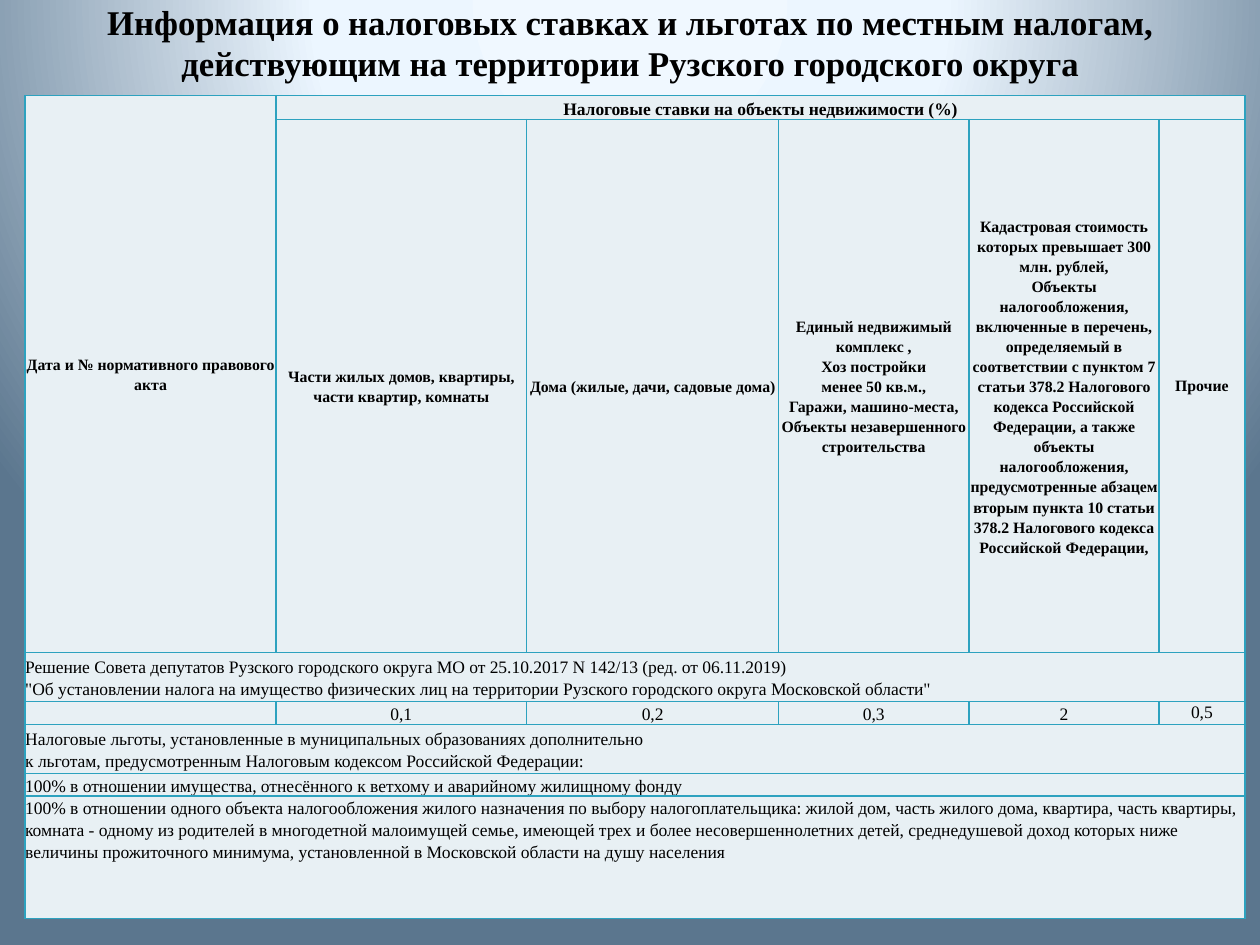
from copy import deepcopy
from pptx import Presentation
from pptx.dml.color import RGBColor
from pptx.enum.text import MSO_ANCHOR as ANCHOR, PP_ALIGN as ALIGN
from pptx.oxml import parse_xml
from pptx.util import Inches, Pt

NS = 'xmlns:a="http://schemas.openxmlformats.org/drawingml/2006/main"'
NS_P = 'xmlns:p="http://schemas.openxmlformats.org/presentationml/2006/main"'


def rgb(value):
    return RGBColor.from_string(value)


def write(p, text, size, bold, align, spacing=None):
    p.text = text
    p.alignment = align
    p.line_spacing = spacing
    for r in p.runs:
        for name, value in {"name": "Times New Roman", "size": Pt(size), "bold": bold}.items():
            setattr(r.font, name, value)
        r.font.color.rgb = rgb("000000")
    for br in p._p.xpath("a:br"):
        br.append(deepcopy(p.runs[0]._r.rPr))


prs = Presentation()
prs.slide_width, prs.slide_height = Inches(10), Inches(7.5)
s = prs.slides.add_slide(prs.slide_layouts[5])

stops = "".join(
    f'<a:gs pos="{pos * 1000}"><a:srgbClr val="{color}"/></a:gs>'
    for pos, color in [(0, "F0F8FF"), (40, "ECF6FF"), (100, "5B768E")]
)
s.element.cSld.insert(0, parse_xml(
    f'<p:bg {NS_P} {NS}><p:bgPr><a:gradFill rotWithShape="1"><a:gsLst>{stops}</a:gsLst>'
    '<a:path path="circle"><a:fillToRect l="50000" t="-80000" r="50000" b="180000"/></a:path>'
    '</a:gradFill><a:effectLst/></p:bgPr></p:bg>'
))

title = s.shapes.title
title.left, title.top, title.width, title.height = map(Inches, (0.5, 0, 9, 0.67))
tf = title.text_frame
tf.word_wrap = True
tf.vertical_anchor = ANCHOR.MIDDLE
tf.margin_top = tf.margin_bottom = 0
write(
    tf.paragraphs[0],
    "Информация о налоговых ставках и льготах по местным налогам, "
    "действующим на территории Рузского городского округа",
    19.8, True, ALIGN.CENTER,
)

cols = [1.99, 1.99, 2, 1.51, 1.51, 0.68]
rows = [0.19, 4.23, 0.39, 0.18, 0.39, 0.18, 0.97]
table = s.shapes.add_table(
    len(rows), len(cols), Inches(0.2), Inches(0.76), Inches(sum(cols)), Inches(sum(rows))
).table
for col, width in zip(table.columns, cols):
    col.width = Inches(width)
for row, height in zip(table.rows, rows):
    row.height = Inches(height)

for cell in table.iter_cells():
    cell.margin_left = cell.margin_right = cell.margin_top = cell.margin_bottom = 0
    cell.vertical_anchor = ANCHOR.MIDDLE
    tc_pr = cell._tc.get_or_add_tcPr()
    for side in ("lnL", "lnR", "lnT", "lnB"):
        tc_pr.append(parse_xml(
            f'<a:{side} {NS} w="12700"><a:solidFill><a:srgbClr val="2DA2BF"/></a:solidFill></a:{side}>'
        ))
    cell.fill.solid()
    cell.fill.fore_color.rgb = rgb("E8F0F4")
    cell.text_frame.paragraphs[0]._p.get_or_add_endParaRPr().set("sz", "1000")

table.cell(0, 0).merge(table.cell(1, 0))
table.cell(0, 1).merge(table.cell(0, 5))
for row in (2, 4, 5, 6):
    table.cell(row, 0).merge(table.cell(row, 5))

headers = [
    "Части жилых домов, квартиры, части квартир, комнаты",
    "Дома (жилые, дачи, садовые дома)",
    "Единый недвижимый комплекс ,\nХоз постройки\nменее 50 кв.м.,\nГаражи, машино-места,\n"
    "Объекты незавершенного строительства",
    "Кадастровая стоимость которых превышает 300 млн. рублей,\nОбъекты налогообложения, "
    "включенные в перечень, определяемый в соответствии с пунктом 7 статьи 378.2 Налогового "
    "кодекса Российской Федерации, а также объекты налогообложения, предусмотренные абзацем "
    "вторым пункта 10 статьи 378.2 Налогового кодекса Российской Федерации,",
    "Прочие",
]
rates = ["0,1", "0,2", "0,3", "2", "0,5"]
notes = {
    2: "Решение Совета депутатов Рузского городского округа МО от 25.10.2017 N 142/13 "
       "(ред. от 06.11.2019)\n\"Об установлении налога на имущество физических лиц на "
       "территории Рузского городского округа Московской области\"",
    4: "Налоговые льготы, установленные в муниципальных образованиях дополнительно\n"
       "к льготам, предусмотренным Налоговым кодексом Российской Федерации:",
    5: "100% в отношении имущества, отнесённого к ветхому и аварийному жилищному фонду",
    6: "100% в отношении одного объекта налогообложения жилого назначения по выбору "
       "налогоплательщика: жилой дом, часть жилого дома, квартира, часть квартиры, комната - "
       "одному из родителей в многодетной малоимущей семье, имеющей трех и более "
       "несовершеннолетних детей, среднедушевой доход которых ниже величины прожиточного "
       "минимума, установленной в Московской области на душу населения",
}

entries = [
    (0, 0, "Дата и № нормативного правового акта", 9, True, ALIGN.CENTER, 1.15),
    (0, 1, "Налоговые ставки на объекты недвижимости (%)", 10, True, ALIGN.CENTER, 1.15),
]
for col, (header, rate) in enumerate(zip(headers, rates), 1):
    last = col == len(headers)
    entries.append((1, col, header, 9, True, ALIGN.CENTER, None if last else 1.15))
    entries.append((3, col, rate, 10, False, ALIGN.CENTER, None if last else Pt(12.8)))
for row, note in notes.items():
    entries.append((row, 0, note, 10, False, ALIGN.LEFT, Pt(12.8) if row == 5 else 1.15))
for row, col, *text_format in entries:
    write(table.cell(row, col).text_frame.paragraphs[0], *text_format)
for row in (5, 6):
    table.cell(row, 0).vertical_anchor = ANCHOR.TOP

prs.save("out.pptx")
